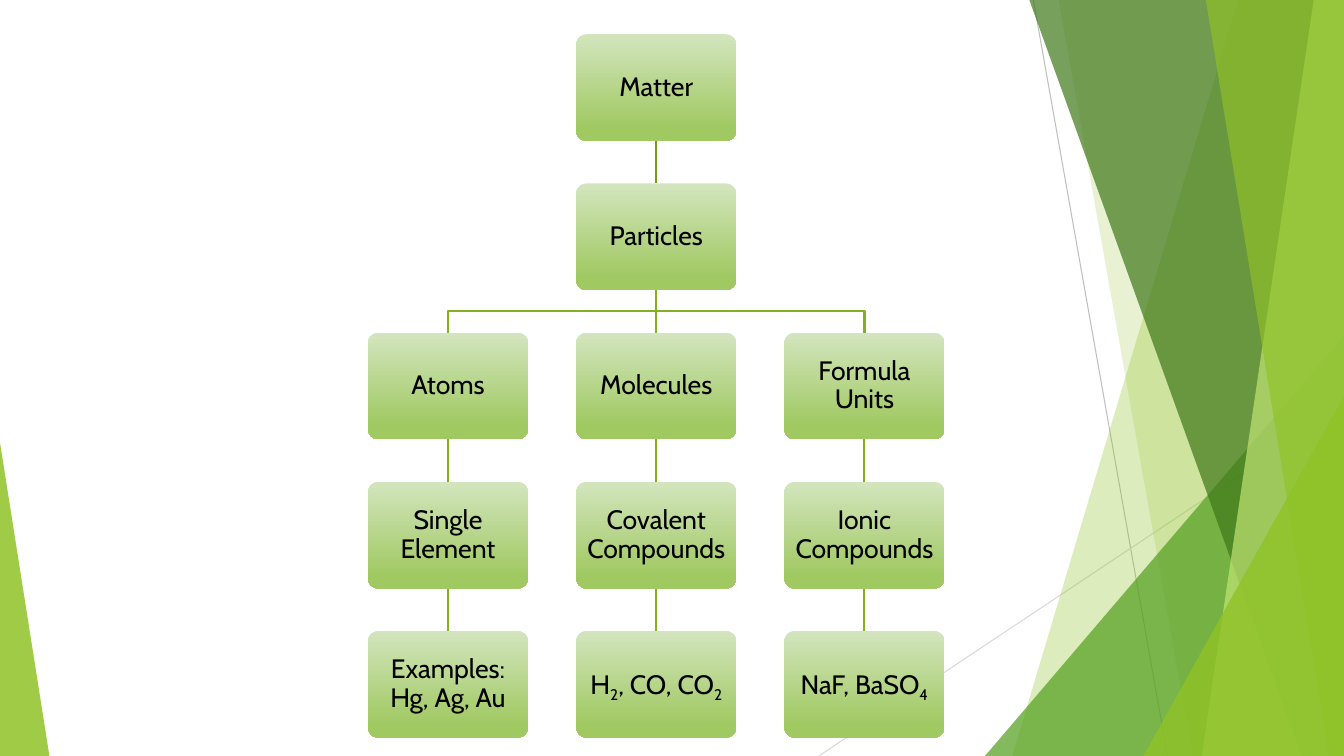
from dataclasses import dataclass
from itertools import pairwise

from lxml.etree import SubElement
from pptx import Presentation
from pptx.dml.color import RGBColor as Rgb
from pptx.enum.shapes import MSO_CONNECTOR as Connector, MSO_SHAPE as Preset
from pptx.enum.text import MSO_ANCHOR as Anchor, PP_ALIGN as Align
from pptx.oxml.ns import qn
from pptx.shapes.autoshape import Shape
from pptx.util import Inches, Pt

COLORS = {
    "lime": "90C226", "green": "54A021", "forest": "3F7819", "pale": "C0E474",
    "box_top": "D3E5BE", "box_bottom": "A0C962", "text": "000000",
    "trunk": "739B1E", "branch": "83B022", "ray": "BFBFBF", "faint_ray": "D9D9D9",
}
FONT = "Cabin"

deck = Presentation()
deck.slide_width, deck.slide_height = Inches(13.33), Inches(7.5)
page = deck.slides.add_slide(deck.slide_layouts[6])

Point = tuple[float, float]  # percent of the slide's width and height


@dataclass(frozen=True)
class Band:
    """Area from a slanted left edge to the right side of the slide."""
    top_x: float
    bottom_x: float
    color: str
    opacity: int


@dataclass(frozen=True)
class Corner:
    """Triangle standing on the lower edge of the slide."""
    left: float
    top: float
    width: float
    apex: float
    color: str
    opacity: int


@dataclass(frozen=True)
class Node:
    """Chart box; every second piece of its label is a subscript."""
    column: int
    row: int
    label: tuple[str, ...]

    @property
    def left(self) -> float:
        return 27.38 + 15.49 * self.column

    @property
    def top(self) -> float:
        return 4.53 + 19.73 * self.row

    @property
    def middle(self) -> float:
        return self.left + BOX_WIDTH / 2

    @property
    def bottom(self) -> float:
        return self.top + BOX_HEIGHT


BOX_WIDTH, BOX_HEIGHT = 11.92, 14.13


def across(share: float) -> int:
    return round(deck.slide_width * share / 100)


def down(share: float) -> int:
    return round(deck.slide_height * share / 100)


def draw_line(start: Point, end: Point, color: str, width: float) -> None:
    line = page.shapes.add_connector(
        Connector.STRAIGHT, across(start[0]), down(start[1]), across(end[0]), down(end[1]))
    line.line.color.rgb = Rgb.from_string(COLORS[color])
    line.line.width = Pt(width)
    SubElement(line._element.spPr, qn("a:effectLst"))


def draw_outline(points: list[Point], close: bool) -> Shape:
    corners = [(across(x), down(y)) for x, y in points]
    builder = page.shapes.build_freeform(*corners[0])
    builder.add_line_segments(corners[1:], close=close)
    shape = builder.convert_to_shape()
    shape.shadow.inherit = False
    return shape


def paint(shape: Shape, color: str, opacity: int) -> None:
    shape.fill.solid()
    shape.fill.fore_color.rgb = Rgb.from_string(COLORS[color])
    shade = shape._element.spPr.find(qn("a:solidFill"))[0]
    SubElement(shade, qn("a:alpha")).set("val", str(opacity * 1000))
    shape.line.fill.background()
    shape.shadow.inherit = False


def draw_band(band: Band) -> None:
    points = [(band.top_x, 0), (100, 0), (100, 100), (band.bottom_x, 100)]
    paint(draw_outline(points, close=True), band.color, band.opacity)


def draw_corner(corner: Corner) -> None:
    shape = page.shapes.add_shape(
        Preset.ISOSCELES_TRIANGLE, across(corner.left), down(corner.top),
        across(corner.width), down(100 - corner.top))
    shape.adjustments[0] = corner.apex
    paint(shape, corner.color, corner.opacity)


def draw_link(parent: Node, child: Node) -> None:
    if parent.column == child.column:
        color = "branch" if parent.row else "trunk"
        draw_line((parent.middle, parent.bottom), (child.middle, child.top), color, 1.5)
        return
    bend = (parent.bottom + child.top) / 2
    elbow = draw_outline([(parent.middle, parent.bottom), (parent.middle, bend),
                          (child.middle, bend), (child.middle, child.top)], close=False)
    elbow.fill.background()
    elbow.line.color.rgb = Rgb.from_string(COLORS["branch"])
    elbow.line.width = Pt(1.5)


def draw_node(node: Node) -> None:
    box = page.shapes.add_shape(
        Preset.ROUNDED_RECTANGLE, across(node.left), down(node.top),
        across(BOX_WIDTH), down(BOX_HEIGHT))
    box.adjustments[0] = 0.1
    box.shadow.inherit = False
    box.line.fill.background()
    box.fill.gradient()
    box.fill.gradient_angle = 270
    stops = ((0, "box_top"), (0.88, "box_bottom"))
    for stop, (position, color) in zip(box.fill.gradient_stops, stops):
        stop.position = position
        stop.color.rgb = Rgb.from_string(COLORS[color])

    # Narrow margins keep the longest word on one line
    frame = box.text_frame
    frame.word_wrap = True
    frame.vertical_anchor = Anchor.MIDDLE
    frame.margin_left = frame.margin_right = Inches(0.05)
    para = frame.paragraphs[0]
    para.alignment = Align.CENTER
    para.line_spacing = 0.9
    for index, piece in enumerate(node.label):
        span = para.add_run()
        span.text = piece
        span.font.name = FONT
        span.font.size = Pt(19)
        span.font.color.rgb = Rgb.from_string(COLORS["text"])
        if index % 2:
            span._r.get_or_add_rPr().set("baseline", "-25000")


# Background: thin rays, then overlapping green facets
draw_line((76.89, 0), (86.87, 100), "ray", 0.75)
draw_line((100, 53.73), (60.92, 100), "faint_ray", 0.75)
FACETS = [
    Band(92.12, 75.32, "lime", 30),
    Band(78.77, 88.75, "lime", 20),
    Corner(73.29, 44.4, 26.71, 1, "green", 72),
    Band(76.59, 96.85, "forest", 70),
    Band(97.75, 89.42, "pale", 70),
    Band(89.72, 98.87, "lime", 65),
    Corner(85.07, 52.4, 14.93, 1, "lime", 80),
    Corner(0, 58.53, 3.68, 0, "lime", 85),
]
for facet in FACETS:
    if isinstance(facet, Band):
        draw_band(facet)
    else:
        draw_corner(facet)

# Chart: a trunk of two boxes over three branches
trunk = [Node(1, 0, ("Matter",)), Node(1, 1, ("Particles",))]
BRANCH_LABELS = [
    [("Atoms",), ("Single Element",), ("Examples: Hg, Ag, Au",)],
    [("Molecules",), ("Covalent Compounds",), ("H", "2", ", CO, CO", "2")],
    [("Formula Units",), ("Ionic Compounds",), ("NaF, BaSO", "4")],
]
branches = [[Node(column, row, label) for row, label in enumerate(labels, start=2)]
            for column, labels in enumerate(BRANCH_LABELS)]

chains = [trunk] + [[trunk[-1], *branch] for branch in branches]
for chain in chains:
    for upper, lower in pairwise(chain):
        draw_link(upper, lower)
for box_group in [trunk, *branches]:
    for member in box_group:
        draw_node(member)

deck.save("out.pptx")
